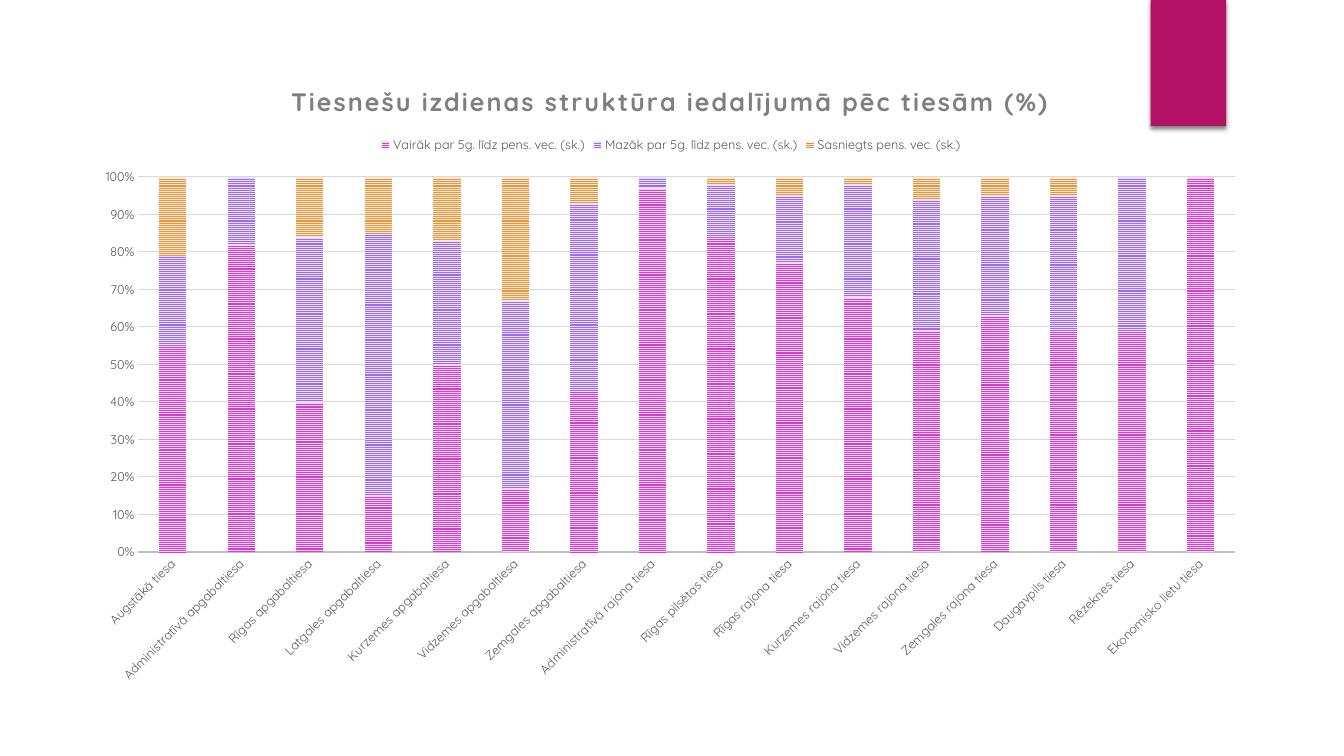
from lxml import etree
from pptx import Presentation
from pptx.chart.data import CategoryChartData
from pptx.dml.color import RGBColor
from pptx.enum.chart import XL_CHART_TYPE, XL_LEGEND_POSITION, XL_TICK_MARK
from pptx.enum.dml import MSO_PATTERN
from pptx.enum.shapes import MSO_SHAPE
from pptx.oxml.ns import qn
from pptx.util import Cm, Pt

STACKED = XL_CHART_TYPE.COLUMN_STACKED_100
TOP = XL_LEGEND_POSITION.TOP
NO_TICK = XL_TICK_MARK.NONE
STRIPES = MSO_PATTERN.NARROW_HORIZONTAL
RECT = MSO_SHAPE.RECTANGLE

BLACK = RGBColor(0x00, 0x00, 0x00)
BERRY = RGBColor(0xB3, 0x11, 0x66)
TITLE_GREY = RGBColor(0x7F, 0x7F, 0x7F)
TEXT_GREY = RGBColor(0x59, 0x59, 0x59)
AXIS_GREY = RGBColor(0xBF, 0xBF, 0xBF)
GRID_GREY = RGBColor(0xD9, 0xD9, 0xD9)
PINK = RGBColor(0xD5, 0x3D, 0xD0)
PALE_PINK = RGBColor(0xF7, 0xD8, 0xF6)
VIOLET = RGBColor(0x9B, 0x6B, 0xF2)
PALE_VIOLET = RGBColor(0xEB, 0xE1, 0xFC)
ORANGE = RGBColor(0xE9, 0x94, 0x3A)
PALE_ORANGE = RGBColor(0xFB, 0xEA, 0xD8)

FONT = "Quicksand"
WIDTH, HEIGHT = 29.64, 16
TITLE = "Tiesnešu izdienas struktūra iedalījumā pēc tiesām (%)"
COURTS = [
    "Augstākā tiesa", "Administratīvā apgabaltiesa", "Rīgas apgabaltiesa",
    "Latgales apgabaltiesa", "Kurzemes apgabaltiesa", "Vidzemes apgabaltiesa",
    "Zemgales apgabaltiesa", "Administratīvā rajona tiesa",
    "Rīgas pilsētas tiesa", "Rīgas rajona tiesa", "Kurzemes rajona tiesa",
    "Vidzemes rajona tiesa", "Zemgales rajona tiesa", "Daugavpils tiesa",
    "Rēzeknes tiesa", "Ekonomisko lietu tiesa",
]
GROUPS = [
    ("Vairāk par 5g. līdz pens. vec. (sk.)", PINK, PALE_PINK,
     [55, 82, 40, 15, 50, 17, 43, 97, 84, 78, 68, 59, 63, 59, 59, 100]),
    ("Mazāk par 5g. līdz pens. vec. (sk.)", VIOLET, PALE_VIOLET,
     [24, 18, 44, 69, 33, 50, 50, 3, 14, 18, 30, 35, 32, 36, 41, 0]),
    ("Sasniegts pens. vec. (sk.)", ORANGE, PALE_ORANGE,
     [21, 0, 16, 15, 17, 33, 7, 0, 2, 5, 2, 6, 5, 5, 0, 0]),
]


def style(font, size=9, color=TEXT_GREY, bold=False):
    font.name = FONT
    font.size = Pt(size)
    font.bold = bold
    font.color.rgb = color


def add_text(frame, text, space=0, **look):
    frame.text = text
    font = frame.paragraphs[0].runs[0].font
    style(font, **look)
    font._element.set("spc", str(int(space * 100)))


def place(part, inner=False, **sides):
    for old in part.findall(qn("c:layout")):
        part.remove(old)
    layout = etree.Element(qn("c:layout"))
    manual = etree.SubElement(layout, qn("c:manualLayout"))
    if inner:
        etree.SubElement(manual, qn("c:layoutTarget"), val="inner")
    for mode in ("xMode", "yMode"):
        etree.SubElement(manual, qn("c:" + mode), val="edge")
    for side, length in sides.items():
        whole = WIDTH if side in "xw" else HEIGHT
        etree.SubElement(manual, qn("c:" + side), val=str(length / whole))
    overlay = part.find(qn("c:overlay"))
    if overlay is None:
        part.insert(0, layout)
    else:
        overlay.addprevious(layout)


def add_tab(slide):
    tab = slide.shapes.add_shape(RECT, Cm(29), 0, Cm(1.9), Cm(3.18))
    tab.shadow.inherit = False
    tab.fill.solid()
    tab.fill.fore_color.rgb = BERRY
    tab.line.fill.background()
    effects = tab._element.spPr.find(qn("a:effectLst"))
    shadow = etree.SubElement(
        effects, qn("a:outerShdw"), blurRad=str(Pt(3)), dist=str(Pt(2)),
        dir="5400000", algn="ctr", rotWithShape="0")
    color = etree.SubElement(shadow, qn("a:srgbClr"), val=str(BLACK))
    etree.SubElement(color, qn("a:alpha"), val="45000")


def add_chart(slide):
    data = CategoryChartData()
    data.categories = COURTS
    for name, _, _, shares in GROUPS:
        data.add_series(name, shares)
    chart = slide.shapes.add_chart(
        STACKED, Cm(2.08), Cm(1.52), Cm(WIDTH), Cm(HEIGHT), data).chart
    style(chart.font, size=10, color=BLACK)
    return chart


def add_title(chart):
    title = chart.chart_title
    add_text(title.text_frame, TITLE, space=1.5, size=18,
             color=TITLE_GREY, bold=True)
    title.include_in_layout = False
    place(title._element, x=5.14, y=0.46)


def add_legend(chart):
    chart.has_legend = True
    legend = chart.legend
    legend.position = TOP
    legend.include_in_layout = False
    style(legend.font)
    place(legend._element, x=7.42, y=1.89, w=14.82, h=0.48)


def set_axes(chart):
    courts, share = chart.category_axis, chart.value_axis
    for axis in (courts, share):
        axis.major_tick_mark = NO_TICK
        axis.minor_tick_mark = NO_TICK
        style(axis.tick_labels.font)
    courts.format.line.color.rgb = AXIS_GREY
    courts.format.line.width = Pt(1.5)
    courts._element.find(".//" + qn("a:bodyPr")).set("rot", "-2700000")
    share.format.line.fill.background()
    share.minimum_scale, share.maximum_scale = 0, 1
    share.major_unit = 0.1
    share.tick_labels.number_format = "0%"
    share.tick_labels.number_format_is_linked = False
    grid = share.major_gridlines.format.line
    grid.color.rgb = GRID_GREY
    grid.width = Pt(0.75)


def fill_bars(chart):
    plot = chart.plots[0]
    plot.gap_width = 150
    plot.overlap = 100
    plot.vary_by_categories = False
    for bars, (_, dark, pale, _) in zip(plot.series, GROUPS):
        fill = bars.format.fill
        fill.patterned()
        fill.pattern = STRIPES
        fill.fore_color.rgb = dark
        fill.back_color.rgb = pale
        bars.invert_if_negative = False


def main():
    deck = Presentation()
    deck.slide_width, deck.slide_height = Cm(33.87), Cm(19.05)
    slide = deck.slides.add_slide(deck.slide_layouts[6])
    add_tab(slide)
    chart = add_chart(slide)
    add_title(chart)
    add_legend(chart)
    set_axes(chart)
    fill_bars(chart)
    plot_area = chart._chartSpace.chart.plotArea
    place(plot_area, inner=True, x=1.41, y=2.94, w=27.63, h=9.45)
    deck.save("out.pptx")


if __name__ == "__main__":
    main()
